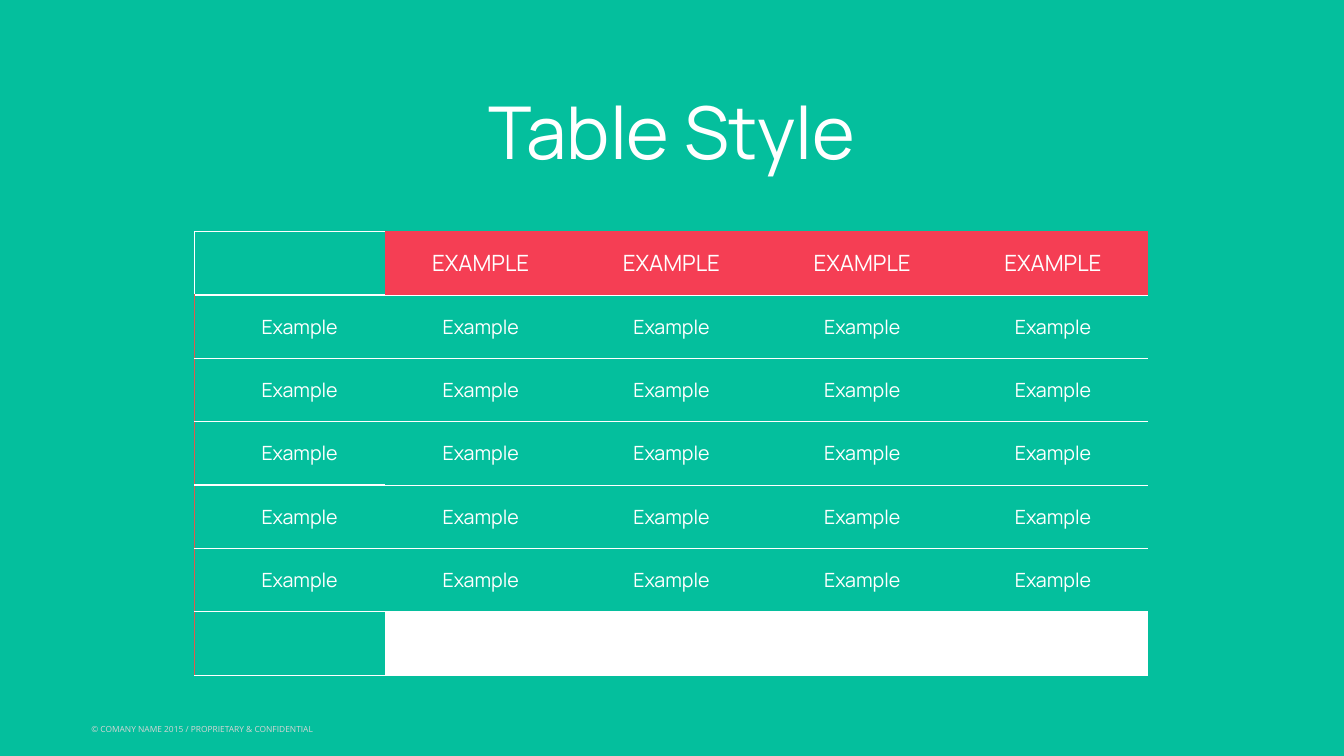
from lxml.etree import SubElement
from pptx import Presentation
from pptx.dml.color import RGBColor
from pptx.enum.text import MSO_ANCHOR, MSO_AUTO_SIZE, PP_ALIGN
from pptx.oxml.ns import qn
from pptx.util import Emu, Pt

PX = 6350
INSET = 9
GREEN, RED, RUST = "04BF9D", "F53E54", "D95D4F"
WHITE, GREY = "FFFFFF", "D6D6D6"
COLUMNS, ROWS = 5, 7
COLUMN_WIDTH, ROW_HEIGHT = 545, 181
LABEL_INDENT = 55


def px(length):
    """Turn a length in px into EMU."""
    return Emu(length * PX)


def color(hex_value):
    """Turn a hex string into a colour."""
    return RGBColor.from_string(hex_value)


def set_text(frame, text, size, font="Manrope", fill=WHITE, inset=0,
             wrap=True):
    """Write one centred, formatted line in a text frame and return it."""
    frame.margin_left = frame.margin_right = px(inset)
    frame.margin_top = frame.margin_bottom = px(inset)
    frame.word_wrap = wrap
    frame.vertical_anchor = MSO_ANCHOR.MIDDLE
    line = frame.paragraphs[0]
    line.alignment = PP_ALIGN.CENTER
    run = line.add_run()
    run.text = text
    run.font.size = Pt(size)
    run.font.name = font
    run.font.color.rgb = color(fill)
    return line


def add_title(slide, text):
    """Place and format the title placeholder."""
    title = slide.shapes.title
    title.left, title.top = px(253), px(232)
    title.width, title.height = px(3332), px(279)
    title.text_frame.auto_size = MSO_AUTO_SIZE.NONE
    set_text(title.text_frame, text, 104)


def add_copyright(slide, text):
    """Add the small copyright line at the bottom left."""
    box = slide.shapes.add_textbox(px(229), px(2059), px(698), px(50))
    set_text(box.text_frame, text, 12, font="Open Sans", fill=GREY,
             inset=INSET, wrap=False)


def add_border(cell, side, line):
    """Draw one cell edge from a (colour, points) pair, or hide it."""
    edge = SubElement(cell._tc.get_or_add_tcPr(), qn(f"a:ln{side}"))
    if line is None:
        SubElement(edge, qn("a:noFill"))
        return
    hex_value, points = line
    edge.set("w", str(Pt(points)))
    fill = SubElement(edge, qn("a:solidFill"))
    SubElement(fill, qn("a:srgbClr"), val=hex_value)


def rule_above(row, column):
    """Give the horizontal rule above a row; row ROWS is the bottom edge."""
    if row == 0 and column > 0:
        return RED, 1
    thick_rows = range(1, ROWS) if column == 0 else [ROWS - 1]
    return WHITE, 2 if row in thick_rows else 1


def style_cell(cell, row, column):
    """Set the borders and fill of a cell by its place in the table."""
    left = (WHITE if row == 0 else RUST, 1) if column == 0 else None
    add_border(cell, "L", left)
    add_border(cell, "R", None)
    add_border(cell, "T", rule_above(row, column))
    add_border(cell, "B", rule_above(row + 1, column))
    band = {0: RED, ROWS - 1: WHITE}.get(row)
    if band and column > 0:
        cell.fill.solid()
        cell.fill.fore_color.rgb = color(band)
    else:
        cell.fill.background()


def write_cell(cell, row, column):
    """Write the heading, row label or value that belongs in a cell."""
    if row == ROWS - 1 or row == column == 0:
        return
    text, size = ("EXAMPLE", 32) if row == 0 else ("Example", 28)
    line = set_text(cell.text_frame, text, size)
    cell.vertical_anchor = MSO_ANCHOR.MIDDLE
    cell.margin_left = cell.margin_right = px(INSET)
    cell.margin_top = cell.margin_bottom = px(INSET)
    if column == 0:
        line.level = 1
        properties = line._p.get_or_add_pPr()
        properties.set("marL", "0")
        properties.set("indent", str(px(LABEL_INDENT)))


def add_example_table(slide):
    """Add the table with a heading row and an empty closing row."""
    table = slide.shapes.add_table(
        ROWS, COLUMNS, px(556), px(662),
        px(COLUMNS * COLUMN_WIDTH), px(ROWS * ROW_HEIGHT)).table
    table.first_row = table.horz_banding = False
    for column in table.columns:
        column.width = px(COLUMN_WIDTH)
    for row in range(ROWS):
        table.rows[row].height = px(ROW_HEIGHT)
        for column in range(COLUMNS):
            cell = table.cell(row, column)
            style_cell(cell, row, column)
            write_cell(cell, row, column)


def main():
    """Build the slide and save it."""
    deck = Presentation()
    deck.slide_width, deck.slide_height = px(3840), px(2160)
    slide = deck.slides.add_slide(deck.slide_layouts[5])
    slide.background.fill.solid()
    slide.background.fill.fore_color.rgb = color(GREEN)
    add_copyright(slide, "© COMANY NAME 2015 / PROPRIETARY & CONFIDENTIAL")
    add_title(slide, "Table Style")
    add_example_table(slide)
    deck.save("out.pptx")


if __name__ == "__main__":
    main()
